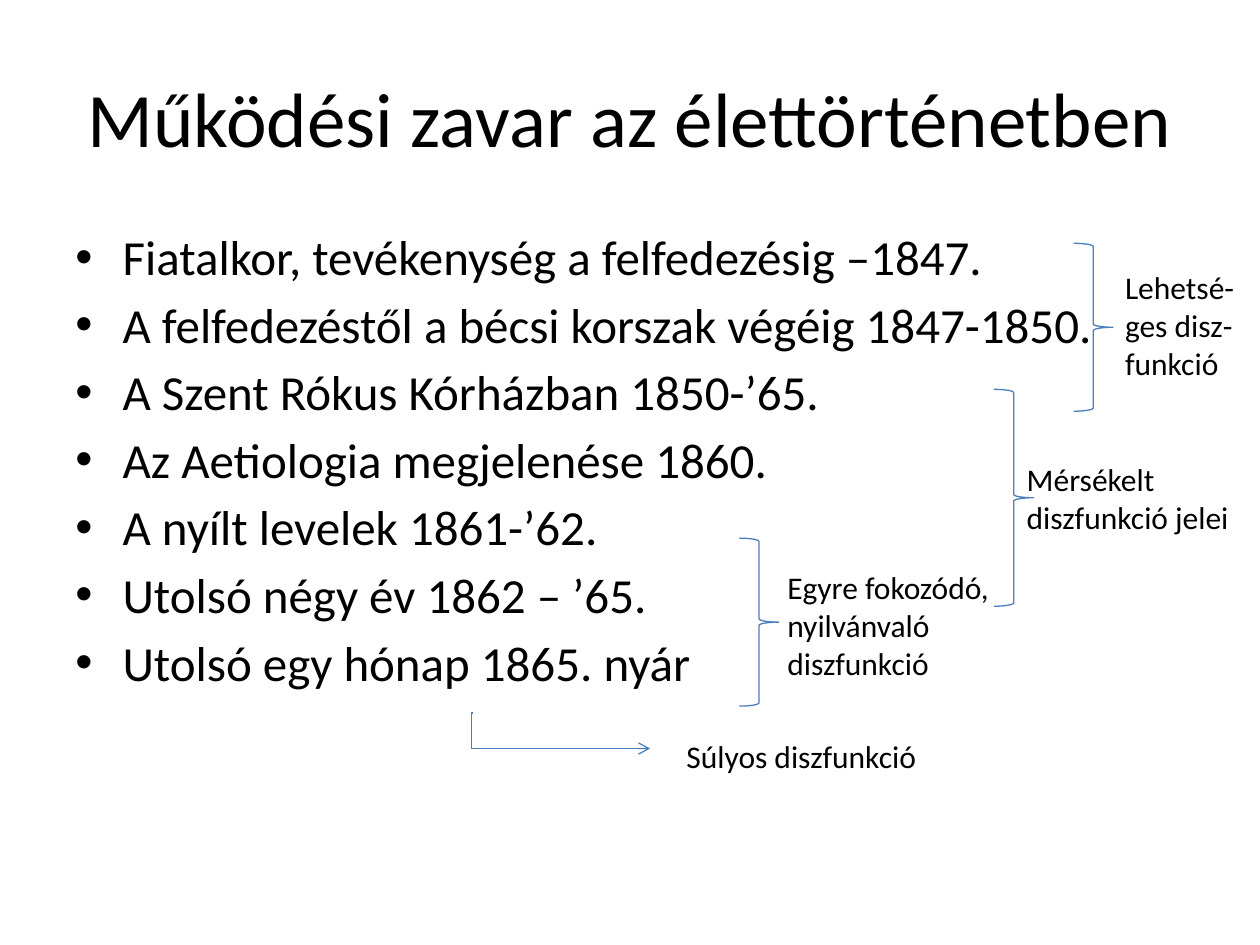
import pptx
import pptx.util
import pptx.dml.color
import pptx.enum.shapes
import pptx.enum.text
import pptx.oxml.ns
import lxml.etree

Pt = pptx.util.Pt
RGB = pptx.dml.color.RGBColor
ALIGN = pptx.enum.text.PP_ALIGN
ANCHOR = pptx.enum.text.MSO_ANCHOR
qn = pptx.oxml.ns.qn

THEME = {
    "font": "Calibri",
    "text": RGB(0x00, 0x00, 0x00),
    "line": RGB(0x4B, 0x7E, 0xBC),
    "line_width": Pt(0.75),
    "title": Pt(44),
    "body": Pt(28),
    "label": Pt(18),
}

prs = pptx.Presentation()
prs.slide_width, prs.slide_height = Pt(720), Pt(540)
s = prs.slides.add_slide(prs.slide_layouts[6])


def add_text(lines, box, size, align=ALIGN.LEFT, anchor=ANCHOR.TOP, bullet=None, before=0):
    tf = s.shapes.add_textbox(*map(Pt, box)).text_frame
    tf.word_wrap = True
    tf.vertical_anchor = anchor
    for i, line in enumerate(lines):
        p = tf.paragraphs[0] if i == 0 else tf.add_paragraph()
        p.alignment = align
        p.space_before = Pt(before)
        r = p.add_run()
        r.text = line
        r.font.name = THEME["font"]
        r.font.size = size
        r.font.color.rgb = THEME["text"]
        if bullet:
            pPr = p._p.get_or_add_pPr()
            pPr.set("marL", str(Pt(27)))
            pPr.set("indent", str(Pt(-27)))
            lxml.etree.SubElement(pPr, qn("a:buFont")).set("typeface", "Arial")
            lxml.etree.SubElement(pPr, qn("a:buChar")).set("char", bullet)


add_text(["Működési zavar az élettörténetben"], (36, 21.6, 648, 90), THEME["title"],
         align=ALIGN.CENTER, anchor=ANCHOR.MIDDLE)

periods = [
    "Fiatalkor, tevékenység a felfedezésig –1847.",
    "A felfedezéstől a bécsi korszak végéig 1847-1850.",
    "A Szent Rókus Kórházban 1850-’65.",
    "Az Aetiologia megjelenése 1860.",
    "A nyílt levelek 1861-’62.",
    "Utolsó négy év 1862 – ’65.",
    "Utolsó egy hónap 1865. nyár",
]
add_text(periods, (36, 126, 648, 356.4), THEME["body"], bullet="•", before=5)

for x, y, h in [(613.5, 139, 96), (568, 222.5, 124), (422.5, 307.5, 96)]:
    sp = s.shapes.add_shape(pptx.enum.shapes.MSO_SHAPE.RIGHT_BRACE, Pt(x), Pt(y), Pt(22.5), Pt(h))
    sp.shadow.inherit = False
    sp.fill.background()
    sp.line.color.rgb = THEME["line"]
    sp.line.width = THEME["line_width"]

labels = [
    ("Lehetsé-ges disz-funkció", (635.8, 149.8, 84.2, 72.7)),
    ("Mérsékelt diszfunkció jelei", (579.6, 259.2, 140.4, 51)),
    ("Egyre fokozódó, nyilvánvaló diszfunkció", (442.8, 321.1, 157.7, 72.7)),
    ("Súlyos diszfunkció", (385.2, 417.6, 180, 29)),
]
for label, box in labels:
    add_text([label], box, THEME["label"])

arrow = s.shapes.add_connector(pptx.enum.shapes.MSO_CONNECTOR.ELBOW,
                               Pt(270.5), Pt(407.5), Pt(371.5), Pt(427.7))
arrow.line.color.rgb = THEME["line"]
arrow.line.width = THEME["line_width"]
lxml.etree.SubElement(arrow.line._get_or_add_ln(), qn("a:tailEnd")).set("type", "arrow")
spPr = arrow._element.spPr
lxml.etree.SubElement(spPr, qn("a:effectLst"))
bend = lxml.etree.SubElement(spPr.find(qn("a:prstGeom")).find(qn("a:avLst")), qn("a:gd"))
bend.set("name", "adj1")
bend.set("fmla", "val -1000")

prs.save("out.pptx")
